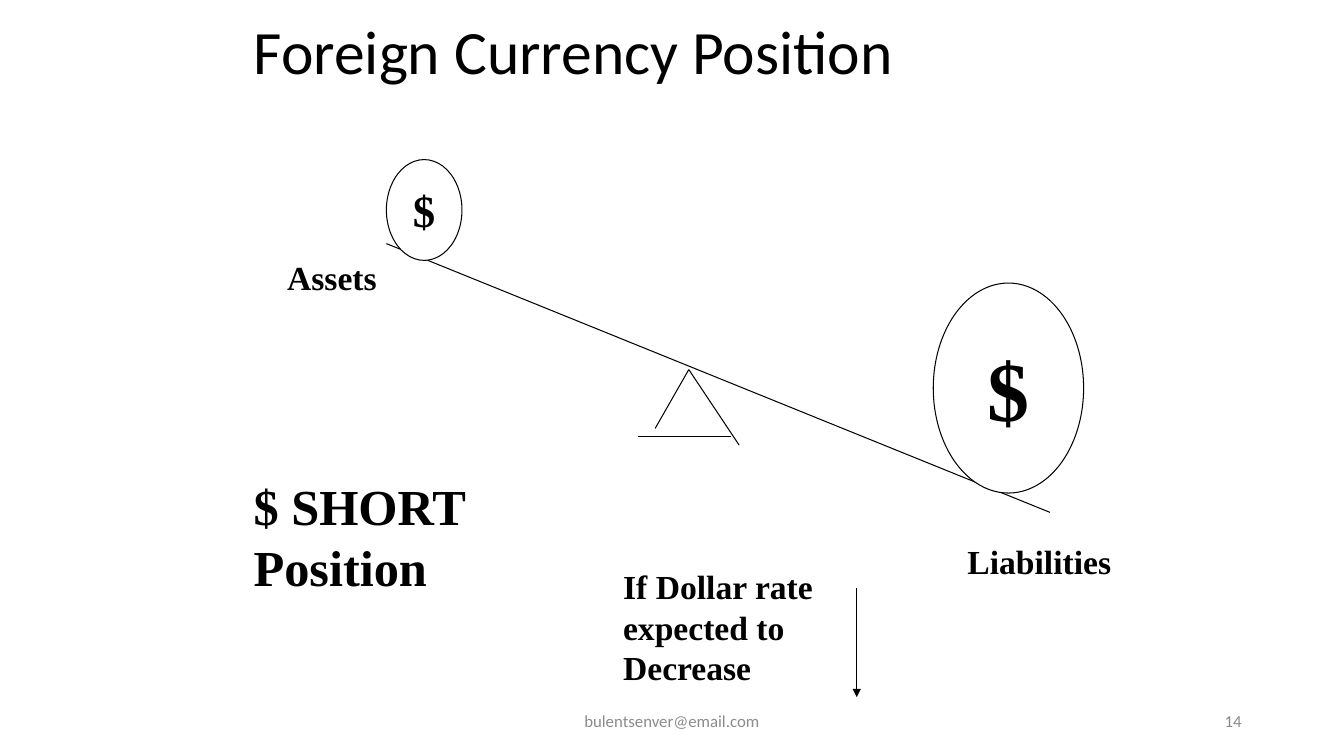
from pptx import Presentation
from pptx.dml.color import RGBColor
from pptx.enum.shapes import MSO_CONNECTOR as CONN, MSO_SHAPE as SHAPE
from pptx.enum.text import MSO_ANCHOR as ANCHOR, MSO_AUTO_SIZE as AUTO, PP_ALIGN as ALIGN
from pptx.oxml.ns import qn
from pptx.util import Inches, Pt
from lxml.etree import SubElement

BLACK = RGBColor(0x00, 0x00, 0x00)
WHITE = RGBColor(0xFF, 0xFF, 0xFF)
GREY = RGBColor(0x8C, 0x8C, 0x8C)
SLATE = RGBColor(0x89, 0x89, 0x89)
SANS, SERIF = "Calibri", "Times New Roman"
COLS, ROWS = 160, 90
CELL = Inches(13.333) / COLS
THIN = Pt(0.75)


def grid(*cells):
    """Turn counts of grid cells into lengths."""
    return [round(n * CELL) for n in cells]


def write(shape, text, size, font=SERIF, color=BLACK, align=ALIGN.LEFT,
          anchor=ANCHOR.TOP, wrap=True):
    frame = shape.text_frame
    frame.auto_size = AUTO.NONE
    frame.word_wrap = wrap
    frame.vertical_anchor = anchor
    para = frame.paragraphs[0]
    para.text = text
    para.alignment = align
    for run in para.runs:
        run.font.size = Pt(size)
        run.font.name = font
        run.font.bold = font == SERIF
        run.font.color.rgb = color
    return para


def label(slide, box, text, size, **style):
    write(slide.shapes.add_textbox(*grid(*box)), text, size, **style)


def line(slide, x1, y1, x2, y2, arrow=False):
    link = slide.shapes.add_connector(CONN.STRAIGHT, *grid(x1, y1, x2, y2))
    link.line.color.rgb = BLACK
    link.line.width = THIN
    if arrow:
        SubElement(link.line._get_or_add_ln(), qn("a:tailEnd"), type="triangle")
    SubElement(link._element.spPr, qn("a:effectLst"))


def weight(slide, box, size):
    """Draw a dollar weight resting on the beam."""
    oval = slide.shapes.add_shape(SHAPE.OVAL, *grid(*box))
    oval.shadow.inherit = False
    oval.fill.solid()
    oval.fill.fore_color.rgb = WHITE
    oval.line.color.rgb = BLACK
    oval.line.width = THIN
    write(oval, "$", size, align=ALIGN.CENTER, anchor=ANCHOR.MIDDLE, wrap=False)


def heading(slide, box):
    title = slide.shapes.title
    title.left, title.top, title.width, title.height = grid(*box)
    para = write(title, "Foreign Currency Position", 44, font=SANS, anchor=ANCHOR.MIDDLE)
    para.line_spacing = 0.9


def seesaw(slide, x, y, w, h):
    """Draw the tilted beam, its stand, and both weights with their names."""
    line(slide, x, y + 10, x + w, y + h)
    top = (x + 36, y + 25)
    line(slide, *top, x + 32, y + 32)
    line(slide, *top, x + 42, y + 34)
    line(slide, x + 41, y + 33, x + 30, y + 33)
    label(slide, (x - 13, y + 11, 17, 6), "Assets", 24)
    label(slide, (x + w - 11, y + h + 2.85, 23.3, 6), "Liabilities", 24)
    weight(slide, (x + w - 13.9, y + 14.7, 17.9, 25), 60)
    weight(slide, (x, y, 9, 12), 32)


def outlook(slide, x, y, w, h):
    """State the expected rate beside an arrow that points down."""
    label(slide, (x, y, w, h), "If Dollar rate expected to Decrease", 24)
    line(slide, x + w + 1, y + 3.2, x + w + 1, y + h + 0.5, arrow=True)


def footer(slide, y, h):
    style = dict(font=SANS, anchor=ANCHOR.MIDDLE)
    label(slide, (53, y, 54, h), "bulentsenver@email.com", 12,
          color=GREY, align=ALIGN.CENTER, **style)
    label(slide, (113, y, 36, h), "14", 12, color=SLATE, align=ALIGN.RIGHT, **style)


def main():
    deck = Presentation()
    deck.slide_width, deck.slide_height = grid(COLS, ROWS)
    slide = deck.slides.add_slide(deck.slide_layouts[5])
    footer(slide, 83.4, 4.8)
    heading(slide, (29, 0, 102, 13))
    seesaw(slide, 46, 19, 79, 42)
    label(slide, (29, 56, 32, 15.7), "$ SHORT\vPosition", 36)
    outlook(slide, 73, 66.8, 28, 15.7)
    deck.save("out.pptx")


if __name__ == "__main__":
    main()
